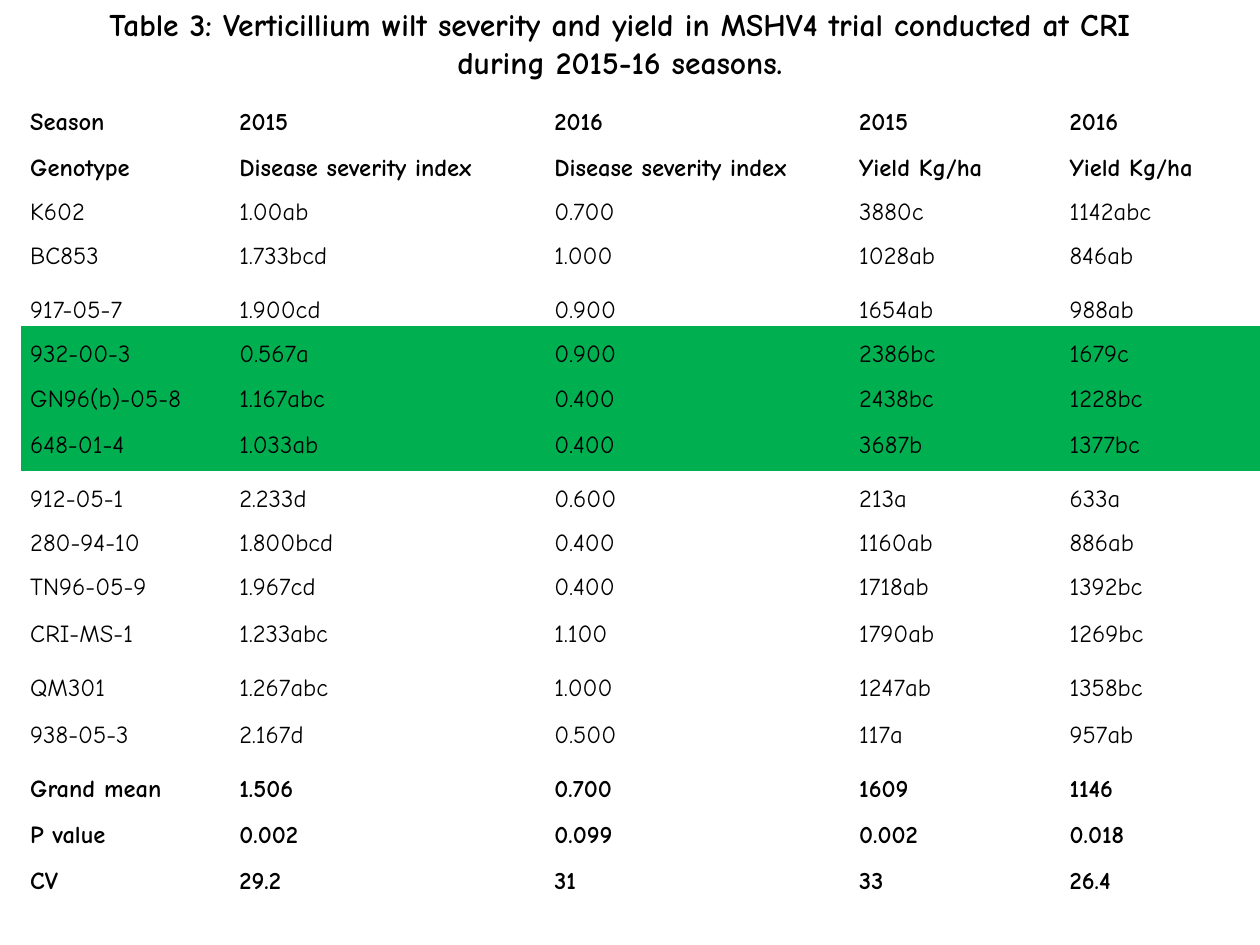
from pptx import Presentation
from pptx.dml.color import RGBColor
from pptx.enum import text
from pptx.oxml import ns
from pptx.util import Inches, Pt

FONT = "Comic Neue"
BLACK = RGBColor(0x00, 0x00, 0x00)
GREEN = RGBColor(0x00, 0xB0, 0x50)
NO_STYLE_NO_GRID = "{2D5ABB26-0587-4C30-8999-92F81FD0307C}"

TITLE = ("Table 3: Verticillium wilt severity and yield in MSHV4 trial "
         "conducted at CRI during 2015-16 seasons.")
COLUMN_WIDTHS = [1.66, 2.5, 2.42, 1.67, 1.58]

# Row height in inches, then the cells
HEADINGS = [
    (0.36, "Season", "2015", "2016", "2015", "2016"),
    (0.32, "Genotype", "Disease severity index", "Disease severity index",
     "Yield Kg/ha", "Yield Kg/ha"),
]
GENOTYPES = [
    (0.32, "K602", "1.00ab", "0.700", "3880c", "1142abc"),
    (0.43, "BC853", "1.733bcd", "1.000", "1028ab", "846ab"),
    (0.35, "917-05-7", "1.900cd", "0.900", "1654ab", "988ab"),
    (0.36, "932-00-3", "0.567a", "0.900", "2386bc", "1679c"),
    (0.36, "GN96(b)-05-8", "1.167abc", "0.400", "2438bc", "1228bc"),
    (0.43, "648-01-4", "1.033ab", "0.400", "3687b", "1377bc"),
    (0.29, "912-05-1", "2.233d", "0.600", "213a", "633a"),
    (0.35, "280-94-10", "1.800bcd", "0.400", "1160ab", "886ab"),
    (0.37, "TN96-05-9", "1.967cd", "0.400", "1718ab", "1392bc"),
    (0.43, "CRI-MS-1", "1.233abc", "1.100", "1790ab", "1269bc"),
    (0.37, "QM301", "1.267abc", "1.000", "1247ab", "1358bc"),
    (0.43, "938-05-3", "2.167d", "0.500", "117a", "957ab"),
]
STATISTICS = [
    (0.37, "Grand mean", "1.506", "0.700", "1609", "1146"),
    (0.36, "P value", "0.002", "0.099", "0.002", "0.018"),
    (0.43, "CV", "29.2", "31", "33", "26.4"),
]
HIGHLIGHTED = {"932-00-3", "GN96(b)-05-8", "648-01-4"}


def write(paragraph, words, size, bold, align):
    paragraph.text = words
    paragraph.alignment = align
    for run in paragraph.runs:
        run.font.name = FONT
        run.font.size = Pt(size)
        run.font.bold = bold
        run.font.color.rgb = BLACK


def add_title(slide):
    title = slide.shapes.add_textbox(Inches(0.42), 0, Inches(9), Inches(0.95))
    frame = title.text_frame
    frame.word_wrap = True
    frame.vertical_anchor = text.MSO_ANCHOR.TOP
    frame.margin_top = Inches(0.04)
    write(frame.paragraphs[0], TITLE, 18, True, text.PP_ALIGN.CENTER)


def fill_cell(cell, words, bold, highlighted):
    cell.margin_left = cell.margin_right = Inches(0.07)
    cell.margin_top = cell.margin_bottom = 0
    if highlighted:
        cell.fill.solid()
        cell.fill.fore_color.rgb = GREEN
    else:
        cell.fill.background()
    paragraph = cell.text_frame.paragraphs[0]
    write(paragraph, words, 14, bold, text.PP_ALIGN.JUSTIFY)
    paragraph.line_spacing = 1.5


def add_trial_table(slide):
    rows = HEADINGS + GENOTYPES + STATISTICS
    frame = slide.shapes.add_table(
        len(rows), len(COLUMN_WIDTHS), Inches(0.17), Inches(0.75),
        Inches(sum(COLUMN_WIDTHS)), Inches(sum(row[0] for row in rows)))
    table = frame.table
    table.first_row = table.horz_banding = False
    for style in frame.element.iter(ns.qn("a:tableStyleId")):
        style.text = NO_STYLE_NO_GRID

    for column, width in zip(table.columns, COLUMN_WIDTHS):
        column.width = Inches(width)
    for row, values in zip(table.rows, rows):
        height, *entries = values
        row.height = Inches(height)
        for cell, words in zip(row.cells, entries):
            fill_cell(cell, words, values not in GENOTYPES,
                      entries[0] in HIGHLIGHTED)


def main():
    deck = Presentation()
    deck.slide_width, deck.slide_height = Inches(10), Inches(7.5)
    slide = deck.slides.add_slide(deck.slide_layouts[6])
    add_title(slide)
    add_trial_table(slide)
    deck.save("out.pptx")


if __name__ == "__main__":
    main()
